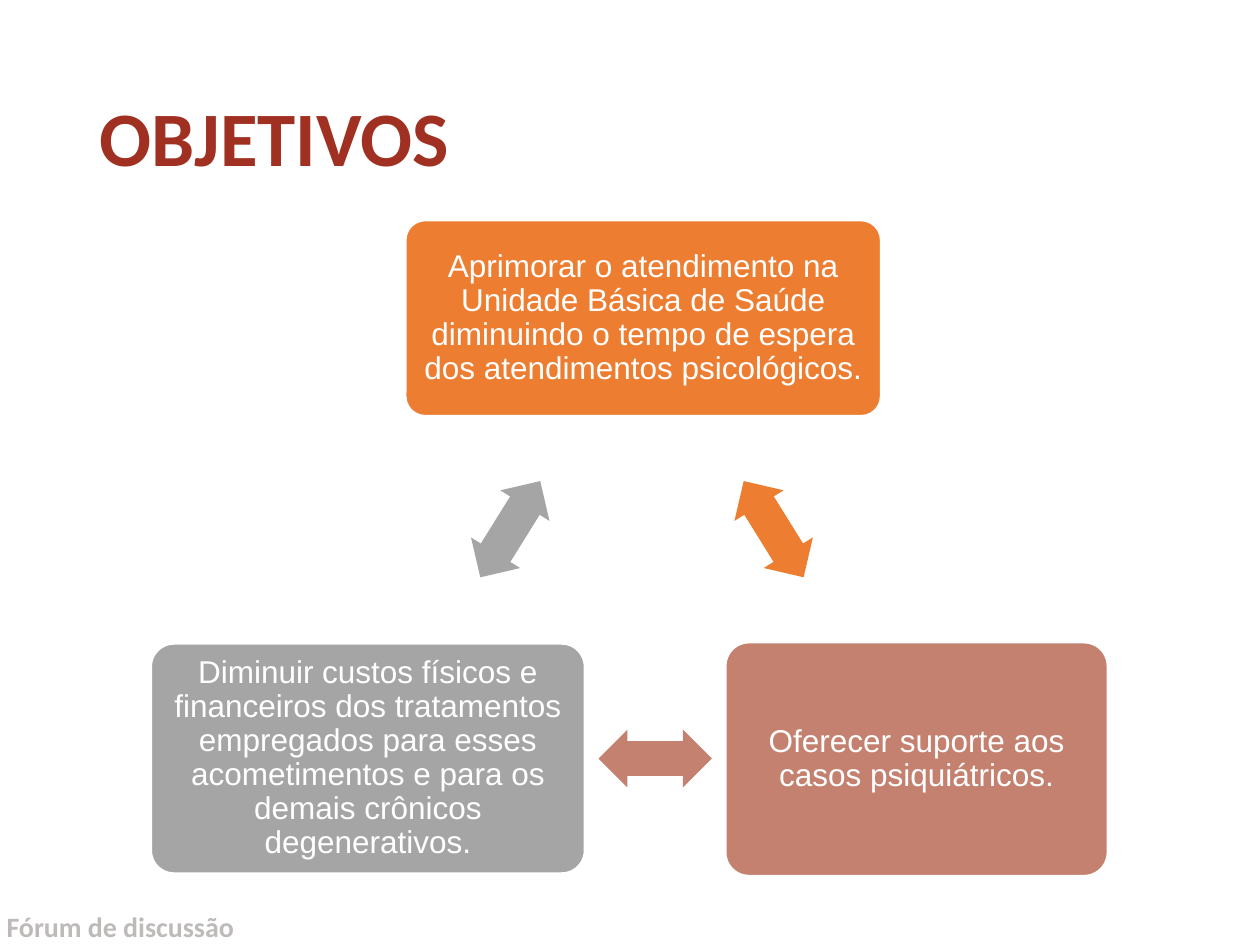
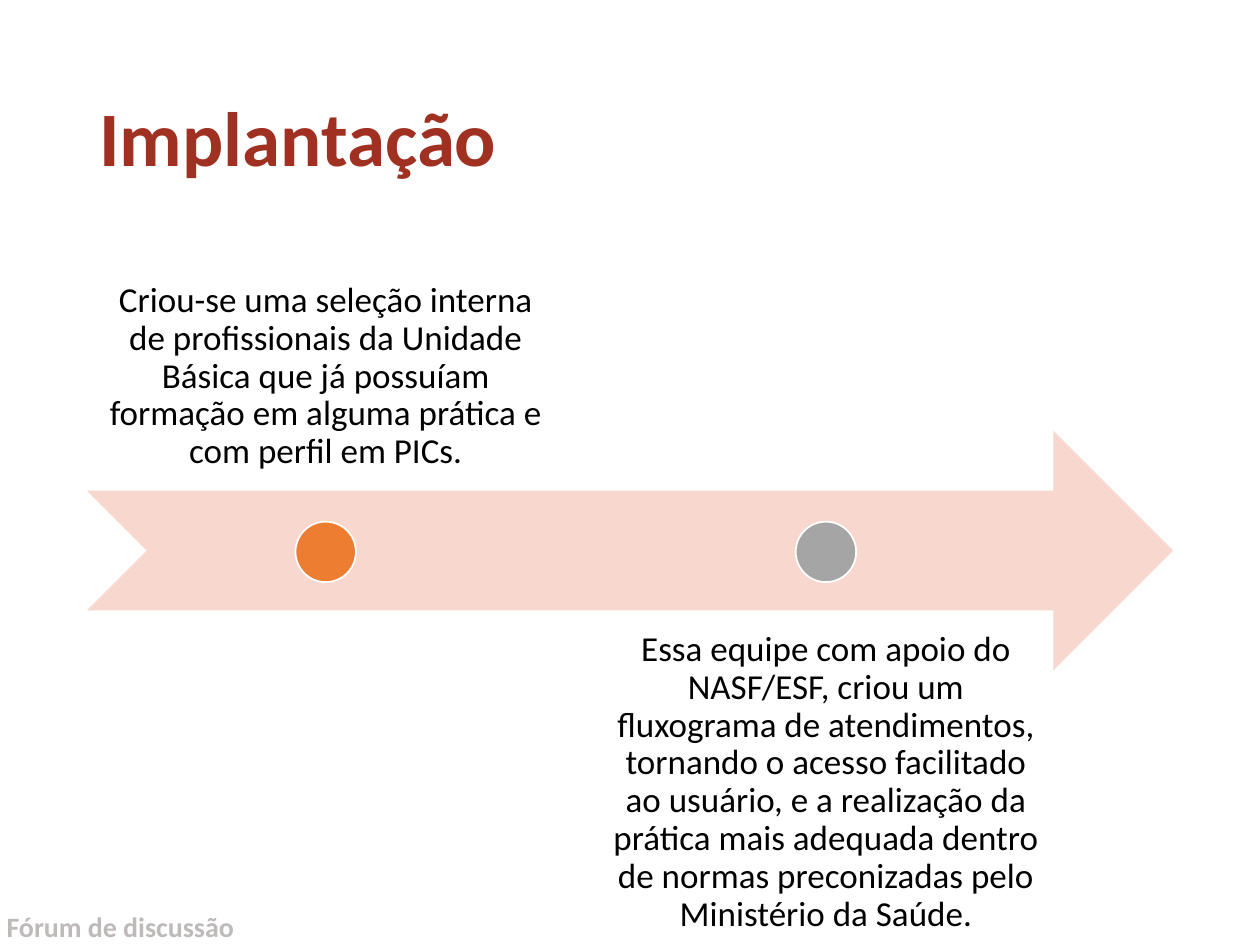
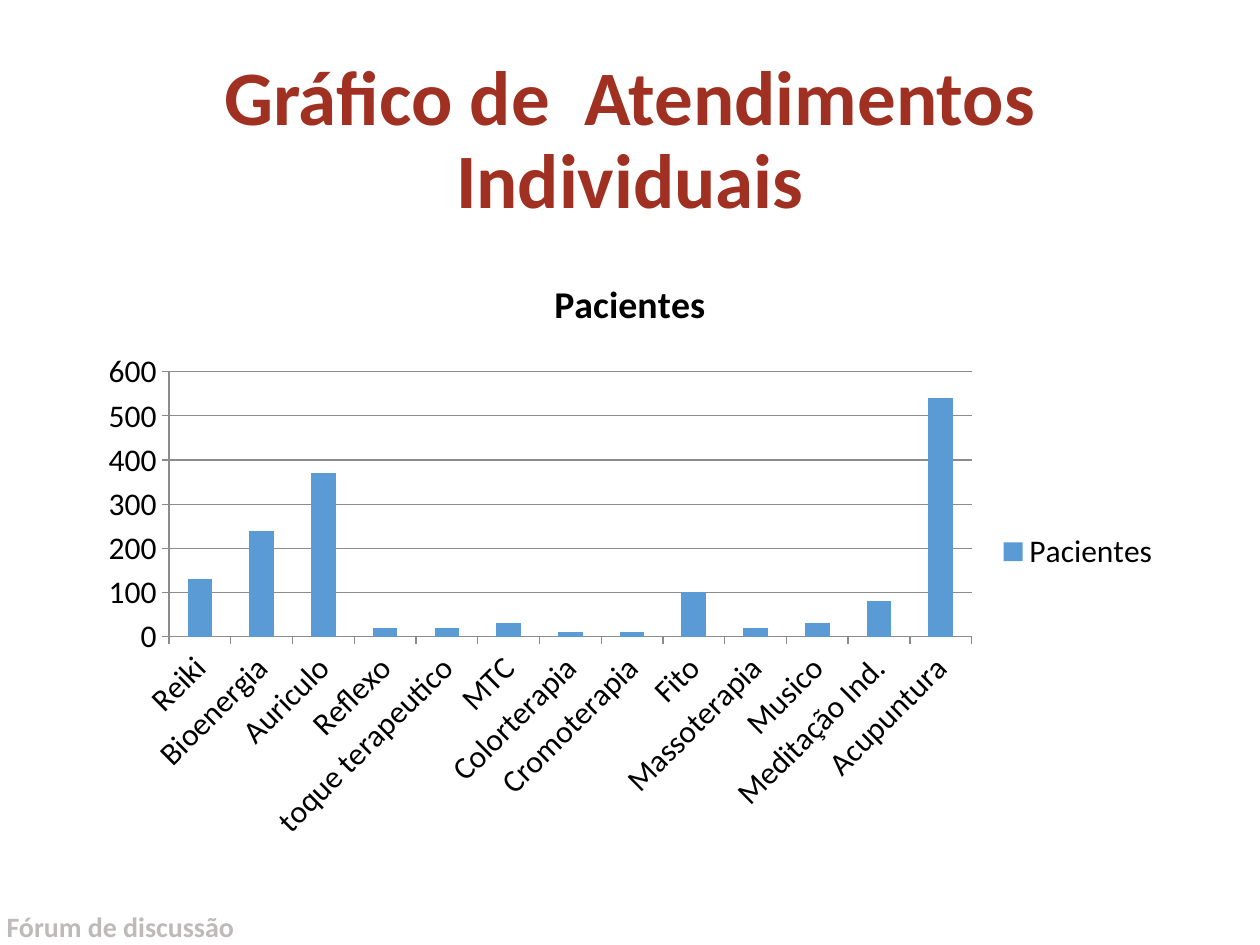
from pptx import Presentation
from pptx.chart.data import CategoryChartData
from pptx.dml.color import RGBColor
from pptx.enum.chart import XL_CHART_TYPE, XL_LEGEND_POSITION, XL_TICK_MARK
from pptx.enum.shapes import MSO_SHAPE
from pptx.enum.text import MSO_ANCHOR, PP_ALIGN
from pptx.util import Inches, Pt

COLORS = {
    "title": "A03021", "footer": "BEBAB9", "orange": "ED7D31",
    "gray": "A5A5A5", "rose": "C48170", "band": "F8D7CE",
    "bar": "5B9BD5", "axis": "8B8B8B", "white": "FFFFFF", "black": "000000",
}
LEFT, WIDTH = 0.69, 8.62


def rgb(name):
    return RGBColor.from_string(COLORS[name])


class Deck:
    """Holds the shared style and the current slide."""

    font = "Calibri"

    def __init__(self):
        self.prs = Presentation()
        self.prs.slide_width = Inches(10)
        self.prs.slide_height = Inches(7.5)

    def slide(self, title, align=PP_ALIGN.LEFT):
        self.s = self.prs.slides.add_slide(self.prs.slide_layouts[6])
        self.text("Fórum de discussão", (-0.1, 7.17, 2.11, 0.41), 16, "footer",
                  bold=True, spacing=1)
        self.text(title, (LEFT, 0.4, WIDTH, 1.45), 44, "title", bold=True,
                  align=align, anchor=MSO_ANCHOR.MIDDLE)

    def set_text(self, sp, text, size, color, font=None, bold=False,
                 align=PP_ALIGN.CENTER, anchor=MSO_ANCHOR.TOP, inset=None, spacing=0.9):
        tf = sp.text_frame
        tf.text = text
        tf.word_wrap = True
        tf.vertical_anchor = anchor
        if inset is not None:
            tf.margin_left = tf.margin_right = Inches(inset)
            tf.margin_top = tf.margin_bottom = Inches(inset)
        p = tf.paragraphs[0]
        p.alignment = align
        p.line_spacing = spacing
        r = p.runs[0]
        r.font.name = font or self.font
        r.font.size = Pt(size)
        r.font.bold = bold
        r.font.color.rgb = rgb(color)

    def text(self, text, box, size, color, **style):
        sp = self.s.shapes.add_textbox(*map(Inches, box))
        self.set_text(sp, text, size, color, **style)

    def shape(self, kind, box, fill, adjust=(), outline=False, rotation=0):
        sp = self.s.shapes.add_shape(kind, *map(Inches, box))
        sp.shadow.inherit = False
        sp.fill.solid()
        sp.fill.fore_color.rgb = rgb(fill)
        if outline:
            sp.line.color.rgb = rgb("white")
            sp.line.width = Pt(1)
        else:
            sp.line.fill.background()
        for i, value in enumerate(adjust):
            sp.adjustments[i] = value
        sp.rotation = rotation
        return sp

    def card(self, text, box, fill):
        sp = self.shape(MSO_SHAPE.ROUNDED_RECTANGLE, box, fill, (0.1,), outline=True)
        self.set_text(sp, text, 18, "white", font="Arial",
                      anchor=MSO_ANCHOR.MIDDLE, inset=0.07)

    def column_chart(self, name, values, box, color):
        data = CategoryChartData()
        data.categories = list(values)
        data.add_series(name, list(values.values()))
        chart = self.s.shapes.add_chart(
            XL_CHART_TYPE.COLUMN_CLUSTERED, *map(Inches, box), data).chart
        chart.font.name = self.font
        chart.font.size = Pt(18)
        chart.font.color.rgb = rgb("black")
        # Title and legend
        chart.has_title = True
        tf = chart.chart_title.text_frame
        tf.text = name
        f = tf.paragraphs[0].runs[0].font
        f.name, f.size, f.bold = self.font, Pt(21.6), True
        f.color.rgb = rgb("black")
        chart.has_legend = True
        chart.legend.position = XL_LEGEND_POSITION.RIGHT
        chart.legend.include_in_layout = False
        # Bars
        plot = chart.plots[0]
        plot.gap_width = 150
        plot.vary_by_categories = False
        fill = plot.series[0].format.fill
        fill.solid()
        fill.fore_color.rgb = rgb(color)
        # Axes
        for axis in (chart.category_axis, chart.value_axis):
            axis.major_tick_mark = XL_TICK_MARK.OUTSIDE
            axis.format.line.color.rgb = rgb("axis")
        chart.value_axis.has_major_gridlines = True
        chart.value_axis.major_gridlines.format.line.color.rgb = rgb("axis")


def objectives(deck):
    deck.slide("OBJETIVOS")
    # Cards, each with the double arrow of its colour
    cards = [
        ("Aprimorar o atendimento na Unidade Básica de Saúde diminuindo o tempo "
         "de espera dos atendimentos psicológicos.",
         (3.22, 1.75, 3.77, 1.55), "orange", (5.69, 3.97), 58.1),
        ("Oferecer suporte aos casos psiquiátricos.",
         (5.76, 5.1, 3.03, 1.85), "rose", (4.75, 5.79), 180),
        ("Diminuir custos físicos e financeiros dos tratamentos empregados para "
         "esses acometimentos e para os demais crônicos degenerativos.",
         (1.2, 5.11, 3.44, 1.82), "gray", (3.6, 3.97), 301.9),
    ]
    for text, box, color, arrow, rotation in cards:
        deck.card(text, box, color)
        deck.shape(MSO_SHAPE.LEFT_RIGHT_ARROW, (*arrow, 0.9, 0.46), color,
                   (0.6, 0.5), rotation=rotation)


def rollout(deck):
    deck.slide("Implantação")
    deck.shape(MSO_SHAPE.NOTCHED_RIGHT_ARROW, (LEFT, 3.42, WIDTH, 1.9), "band")
    # Steps alternate above and below the arrow
    steps = [
        ("Criou-se uma seleção interna de profissionais da Unidade Básica que já "
         "possuíam formação em alguma prática e com perfil em PICs.",
         "orange", 2, MSO_ANCHOR.BOTTOM),
        ("Essa equipe com apoio do NASF/ESF, criou um fluxograma de atendimentos, "
         "tornando o acesso facilitado ao usuário, e a realização da prática mais "
         "adequada dentro de normas preconizadas pelo Ministério da Saúde.",
         "gray", 4.85, MSO_ANCHOR.TOP),
    ]
    step_w, gap, dot = 3.79, 0.18, 0.48
    for i, (text, color, top, anchor) in enumerate(steps):
        left = LEFT + i * (step_w + gap)
        deck.text(text, (left, top, step_w, 1.9), 20, "black",
                  anchor=anchor, inset=0.16)
        deck.shape(MSO_SHAPE.OVAL, (left + (step_w - dot) / 2, 4.14, dot, dot),
                   color, outline=True)


def patients(deck):
    deck.slide("Gráfico de  Atendimentos Individuais", PP_ALIGN.CENTER)
    values = {
        "Reiki": 130, "Bioenergia": 240, "Auriculo": 370, "Reflexo": 20,
        "toque terapeutico": 20, "MTC": 30, "Colorterapia": 10,
        "Cromoterapia": 10, "Fito": 100, "Massoterapia": 20, "Musico": 30,
        "Meditação Ind.": 80, "Acupuntura": 540,
    }
    deck.column_chart("Pacientes", values, (LEFT, 2, WIDTH, 4.76), "bar")


def main():
    deck = Deck()
    objectives(deck)
    rollout(deck)
    patients(deck)
    deck.prs.save("out.pptx")


if __name__ == "__main__":
    main()
